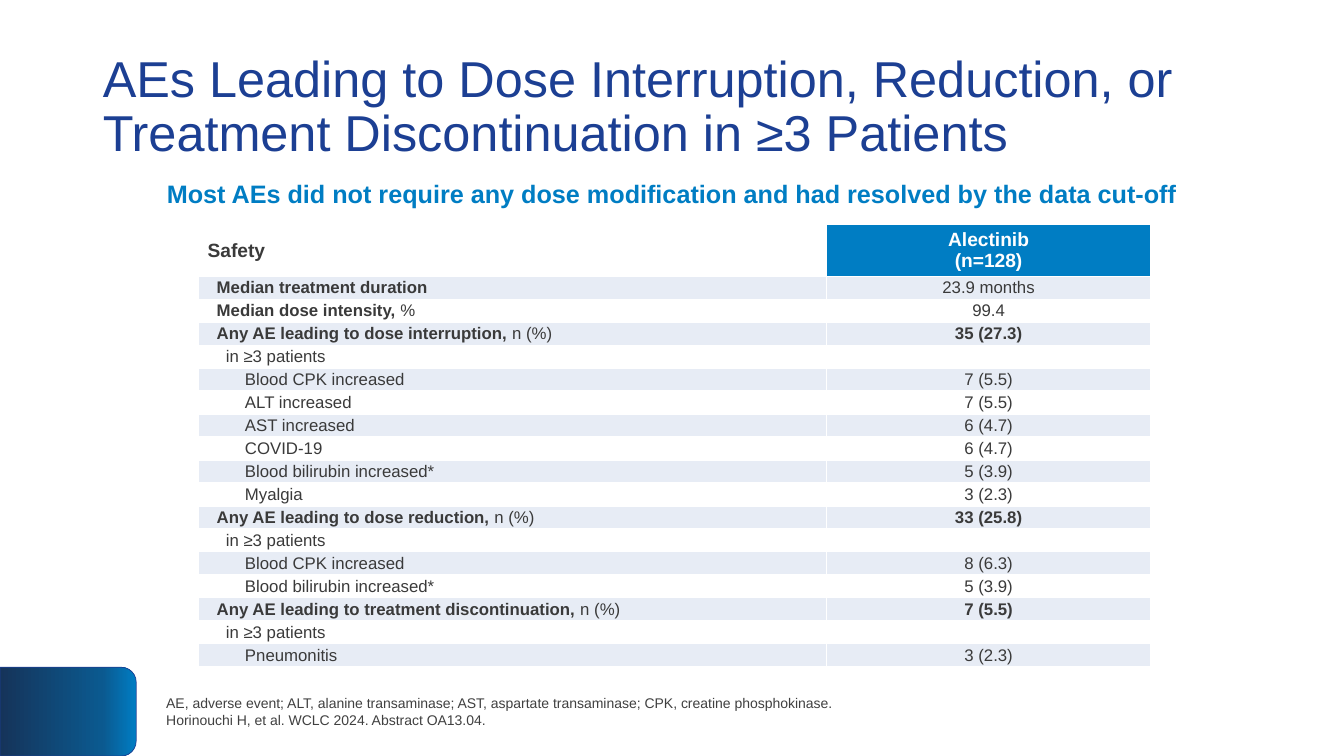
from copy import deepcopy

from lxml.etree import SubElement
from pptx import Presentation
from pptx.dml.color import RGBColor
from pptx.enum.shapes import MSO_SHAPE
from pptx.enum.text import MSO_ANCHOR, MSO_AUTO_SIZE, PP_ALIGN
from pptx.oxml.ns import qn
from pptx.util import Inches, Pt

SLIDE_W, SLIDE_H = Inches(13.33), Inches(7.5)
FONT = "Arial"
NAVY, BLUE, DARK = "1C3F93", "007DC3", "3A3A3A"
WHITE, BAND, GREY = "FFFFFF", "E7ECF5", "404040"

# Left indent in inches of each label level
INDENTS = {"measure": 0.11, "group": 0.2, "event": 0.39}

# Level, bold label, regular label, value
SAFETY_ROWS = [
    ("measure", "Median treatment duration", "", "23.9 months"),
    ("measure", "Median dose intensity, ", "%", "99.4"),
    ("measure", "Any AE leading to dose interruption, ", "n (%)", "35 (27.3)"),
    ("group", "", "in ≥3 patients", ""),
    ("event", "", "Blood CPK increased", "7 (5.5)"),
    ("event", "", "ALT increased", "7 (5.5)"),
    ("event", "", "AST increased", "6 (4.7)"),
    ("event", "", "COVID-19", "6 (4.7)"),
    ("event", "", "Blood bilirubin increased*", "5 (3.9)"),
    ("event", "", "Myalgia", "3 (2.3)"),
    ("measure", "Any AE leading to dose reduction, ", "n (%)", "33 (25.8)"),
    ("group", "", "in ≥3 patients", ""),
    ("event", "", "Blood CPK increased", "8 (6.3)"),
    ("event", "", "Blood bilirubin increased*", "5 (3.9)"),
    ("measure", "Any AE leading to treatment discontinuation, ", "n (%)", "7 (5.5)"),
    ("group", "", "in ≥3 patients", ""),
    ("event", "", "Pneumonitis", "3 (2.3)"),
]


def colour(hex_string):
    return RGBColor.from_string(hex_string)


def area(left, top, width, height):
    """Turn percentages of the slide into lengths."""
    return (int(SLIDE_W * left / 100), int(SLIDE_H * top / 100),
            int(SLIDE_W * width / 100), int(SLIDE_H * height / 100))


def style(paragraph, size, hex_string, bold=False, align=PP_ALIGN.LEFT):
    paragraph.alignment = align
    font = paragraph.font
    font.name, font.size, font.bold = FONT, Pt(size), bold
    font.color.rgb = colour(hex_string)


def add_text(slide, place, text, size, hex_string, **options):
    frame = slide.shapes.add_textbox(*place).text_frame
    frame.word_wrap = True
    frame.vertical_anchor = MSO_ANCHOR.MIDDLE
    frame.paragraphs[0].text = text
    style(frame.paragraphs[0], size, hex_string, **options)


def set_title(slide, place, text):
    title = slide.shapes.title
    title.left, title.top, title.width, title.height = place
    frame = title.text_frame
    frame.text = text
    frame.word_wrap = True
    frame.auto_size = MSO_AUTO_SIZE.NONE
    frame.vertical_anchor = MSO_ANCHOR.MIDDLE
    frame.paragraphs[0].line_spacing = 0.9
    style(frame.paragraphs[0], 36, NAVY)


def add_corner_tab(slide, place):
    left, top, width, height = place
    # A quarter turn swaps the sides around the same centre
    offset = (width - height) // 2
    tab = slide.shapes.add_shape(MSO_SHAPE.ROUND_2_SAME_RECTANGLE,
                                 left + offset, top - offset, height, width)
    tab.rotation = 90
    tab.shadow.inherit = False
    tab.line.color.rgb = colour(NAVY)
    tab.line.width = Pt(0.5)
    tab.fill.gradient()
    tab.fill.gradient_angle = 270
    stop_list = tab._element.spPr.find(qn("a:gradFill")).find(qn("a:gsLst"))
    stop_list.append(deepcopy(stop_list[0]))
    stops = zip(tab.fill.gradient_stops,
                [(0, BLUE), (0.25, "0B598F"), (1, "15345A")])
    for stop, (position, hex_string) in stops:
        stop.position = position
        stop.color.rgb = colour(hex_string)


def add_borders(cell):
    properties = cell._tc.get_or_add_tcPr()
    for index, side in enumerate(("a:lnL", "a:lnR", "a:lnT", "a:lnB")):
        border = SubElement(properties, qn(side), w=str(Pt(1)))
        fill = SubElement(border, qn("a:solidFill"))
        SubElement(fill, qn("a:srgbClr"), val=WHITE)
        properties.insert(index, border)


def format_cell(cell, fill):
    """Set the cell's look and return its paragraph."""
    cell.fill.solid()
    cell.fill.fore_color.rgb = colour(fill)
    cell.vertical_anchor = MSO_ANCHOR.MIDDLE
    cell.margin_left = cell.margin_right = Inches(0.07)
    cell.margin_top = cell.margin_bottom = 0
    add_borders(cell)
    return cell.text_frame.paragraphs[0]


def fill_label(cell, fill, indent, bold_text, regular_text, size=12):
    paragraph = format_cell(cell, fill)
    properties = paragraph._p.get_or_add_pPr()
    properties.set("marL", str(Inches(indent)))
    properties.set("indent", "0")
    for text, bold in ((bold_text, True), (regular_text, False)):
        if text:
            run = paragraph.add_run()
            run.text = text
            run.font.bold = bold
    style(paragraph, size, DARK, bold=bool(bold_text))


def fill_value(cell, fill, text, size=12, hex_string=DARK, bold=False):
    paragraph = format_cell(cell, fill)
    paragraph.text = text
    style(paragraph, size, hex_string, bold, PP_ALIGN.CENTER)
    if not text:
        # Keeps an empty row as low as the others
        SubElement(paragraph._p, qn("a:endParaRPr"), sz=str(size * 100))


def add_safety_table(slide, place):
    table = slide.shapes.add_table(len(SAFETY_ROWS) + 1, 2, *place).table
    table.first_row = table.horz_banding = False

    # Column and row sizes
    width, height = place[2:]
    table.columns[0].width = int(width * 0.66)
    table.columns[1].width = width - table.columns[0].width
    header_height = Inches(0.51)
    for row in table.rows:
        row.height = (height - header_height) // len(SAFETY_ROWS)
    table.rows[0].height = header_height

    # Header
    fill_label(table.cell(0, 0), WHITE, 0.02, "Safety", "", 13.7)
    fill_value(table.cell(0, 1), BLUE, "Alectinib\v(n=128)", 13.7, WHITE, True)

    # Body, shaded on odd rows
    for number, (level, strong, regular, value) in enumerate(SAFETY_ROWS, 1):
        fill = BAND if number % 2 else WHITE
        fill_label(table.cell(number, 0), fill, INDENTS[level], strong, regular)
        fill_value(table.cell(number, 1), fill, value,
                   bold=strong.startswith("Any AE"))


def main():
    deck = Presentation()
    deck.slide_width, deck.slide_height = SLIDE_W, SLIDE_H
    slide = deck.slides.add_slide(deck.slide_layouts[5])

    add_corner_tab(slide, area(0, 88.27, 10.13, 11.73))
    set_title(slide, area(6.9, 4.67, 86.27, 19.33),
              "AEs Leading to Dose Interruption, Reduction, or "
              "Treatment Discontinuation in ≥3 Patients")
    add_safety_table(slide, area(14.78, 29.73, 70.82, 58.53))
    add_text(slide, area(5.7, 22.67, 88.6, 5.73),
             "Most AEs did not require any dose modification "
             "and had resolved by the data cut-off",
             18, BLUE, bold=True, align=PP_ALIGN.CENTER)

    # Abbreviations and reference
    add_text(slide, area(11.63, 88.27, 87.4, 11.73),
             "AE, adverse event; ALT, alanine transaminase; AST, aspartate "
             "transaminase; CPK, creatine phosphokinase.\v"
             "Horinouchi H, et al. WCLC 2024. Abstract OA13.04.", 10, GREY)

    deck.save("out.pptx")


if __name__ == "__main__":
    main()
